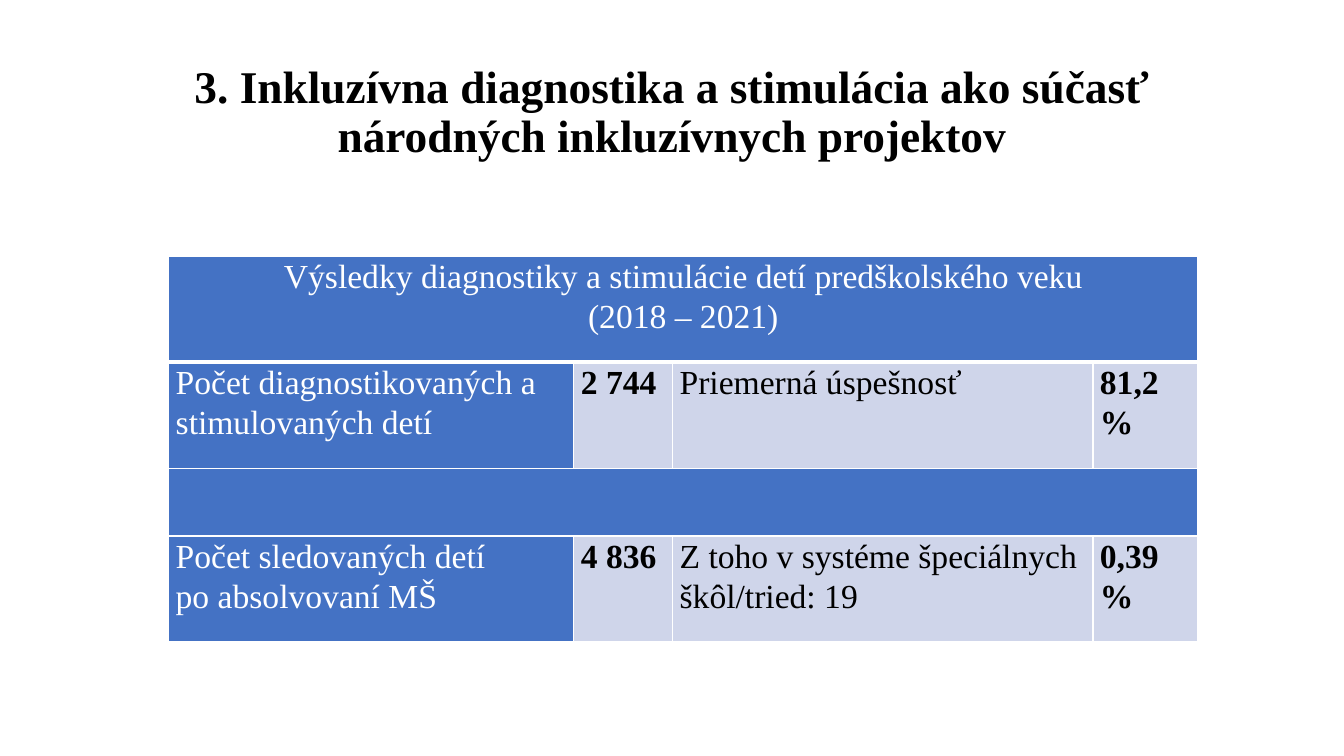
from dataclasses import dataclass

from lxml.etree import SubElement
from pptx import Presentation
from pptx.dml.color import RGBColor
from pptx.enum.text import MSO_ANCHOR as Anchor, MSO_AUTO_SIZE as AutoSize, PP_ALIGN as Align
from pptx.oxml.ns import qn
from pptx.table import _Cell as Cell
from pptx.text.text import TextFrame
from pptx.util import Pt

FONT = "Times New Roman"
BLUE, PALE, WHITE, BLACK = "4472C4", "CFD5EA", "FFFFFF", "000000"
COLUMN_WIDTHS = (289.4, 70.6, 300.2, 74.9)
ROW_HEIGHTS = (75.8, 75.8, 48.2, 75.8)
THIN, THICK = 1, 3


@dataclass
class ResultRow:
    group: str
    count: str
    measure: str
    share: str


HEADING = "Výsledky diagnostiky a stimulácie detí predškolského veku\n(2018 – 2021)"
RESULTS = {
    1: ResultRow("Počet diagnostikovaných a stimulovaných detí", "2 744",
                 "Priemerná úspešnosť", "81,2 %"),
    3: ResultRow("Počet sledovaných detí\npo absolvovaní MŠ", "4 836",
                 "Z toho v systéme špeciálnych škôl/tried: 19", "0,39 %"),
}


def color(value: str) -> RGBColor:
    return RGBColor.from_string(value)


def write_text(frame: TextFrame, text: str, *, size: float = 24, ink: str = BLACK,
               bold: bool = False, align: Align = Align.LEFT, spacing: float = 1.07) -> None:
    """Fill the frame, one paragraph for each line of text."""
    frame.word_wrap = True
    frame.text = text
    for paragraph in frame.paragraphs:
        paragraph.alignment = align
        paragraph.line_spacing = spacing
        paragraph.space_before = paragraph.space_after = Pt(0)
        for run in paragraph.runs:
            run.font.name = FONT
            run.font.size = Pt(size)
            run.font.bold = bold
            run.font.color.rgb = color(ink)


def set_borders(cell: Cell, top: float, bottom: float) -> None:
    properties = cell._tc.get_or_add_tcPr()
    widths = {"a:lnL": THIN, "a:lnR": THIN, "a:lnT": top, "a:lnB": bottom}
    for index, (side, width) in enumerate(widths.items()):
        line = SubElement(properties, qn(side), w=str(Pt(width)))
        fill = SubElement(line, qn("a:solidFill"))
        SubElement(fill, qn("a:srgbClr"), val=WHITE)
        properties.insert(index, line)


def format_cell(cell: Cell, row: int, fill: str) -> None:
    cell.margin_left = cell.margin_right = Pt(5)
    cell.margin_top = cell.margin_bottom = Pt(0)
    cell.fill.solid()
    cell.fill.fore_color.rgb = color(fill)
    set_borders(cell, top=THICK if row == 1 else THIN, bottom=THICK if row == 0 else THIN)


def main() -> None:
    presentation = Presentation()
    presentation.slide_width, presentation.slide_height = Pt(960), Pt(540)
    slide = presentation.slides.add_slide(presentation.slide_layouts[5])

    title = slide.shapes.title
    title.left, title.top, title.width, title.height = Pt(66), Pt(28.8), Pt(828), Pt(104.4)
    title.text_frame.auto_size = AutoSize.NONE
    title.text_frame.vertical_anchor = Anchor.MIDDLE
    write_text(title.text_frame,
               "3. Inkluzívna diagnostika a stimulácia ako súčasť národných inkluzívnych projektov",
               size=32.4, bold=True, align=Align.CENTER, spacing=0.9)

    table = slide.shapes.add_table(
        len(ROW_HEIGHTS), len(COLUMN_WIDTHS), Pt(120.5), Pt(183),
        Pt(sum(COLUMN_WIDTHS)), Pt(sum(ROW_HEIGHTS))).table
    for column, width in zip(table.columns, COLUMN_WIDTHS):
        column.width = Pt(width)
    for index, height in enumerate(ROW_HEIGHTS):
        table.rows[index].height = Pt(height)
        result = RESULTS.get(index)
        for position, cell in enumerate(table.rows[index].cells):
            format_cell(cell, index, PALE if result and position else BLUE)
        if result is None:
            table.cell(index, 0).merge(table.cell(index, len(COLUMN_WIDTHS) - 1))
            continue
        write_text(table.cell(index, 0).text_frame, result.group, ink=WHITE)
        write_text(table.cell(index, 1).text_frame, result.count, bold=True)
        write_text(table.cell(index, 2).text_frame, result.measure)
        write_text(table.cell(index, 3).text_frame, result.share, bold=True)
    write_text(table.cell(0, 0).text_frame, HEADING, ink=WHITE, align=Align.CENTER)

    presentation.save("out.pptx")


if __name__ == "__main__":
    main()
